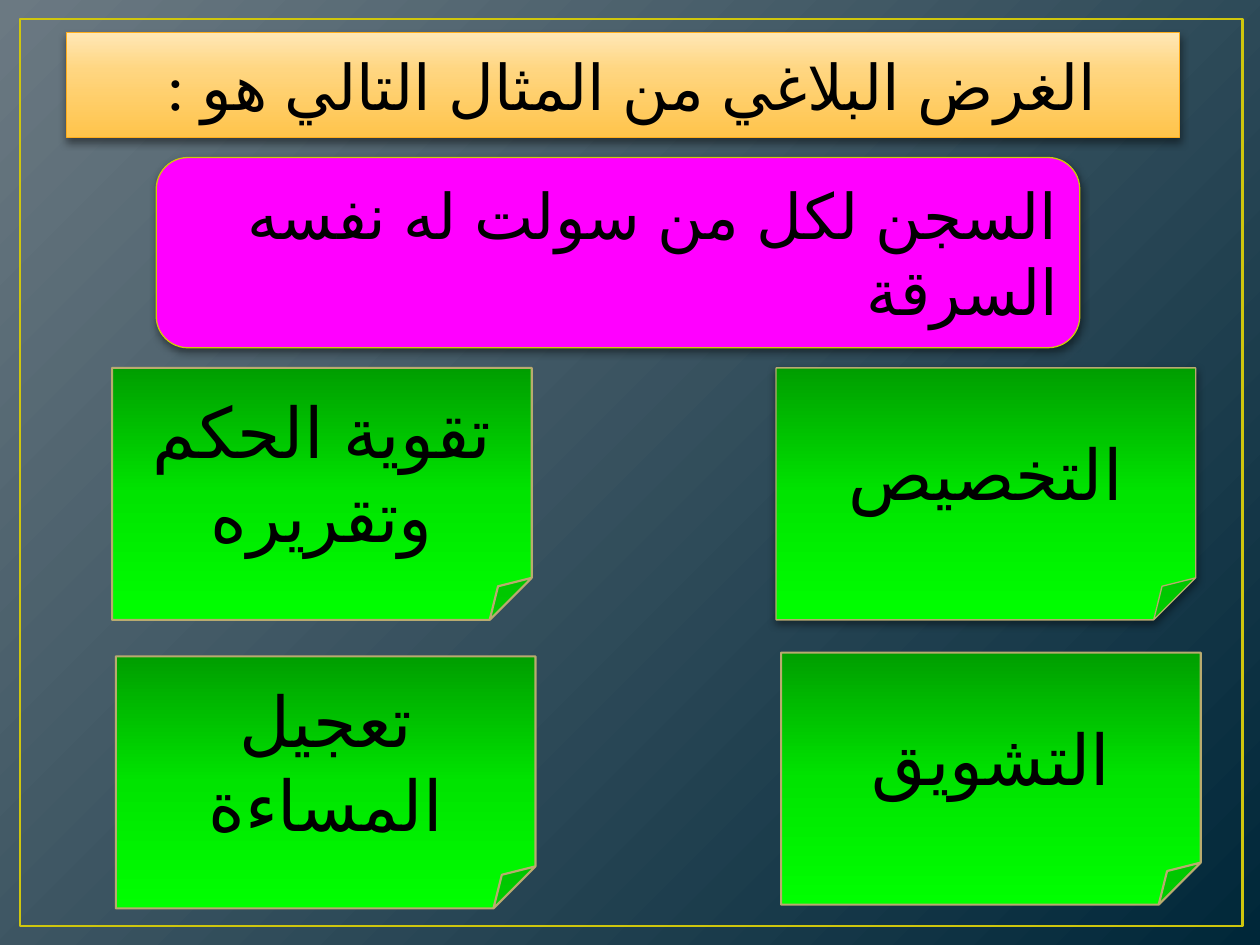
from lxml import etree
from pptx import Presentation
from pptx.dml.color import RGBColor
from pptx.enum.lang import MSO_LANGUAGE_ID
from pptx.enum.shapes import MSO_SHAPE
from pptx.enum.text import MSO_ANCHOR, MSO_AUTO_SIZE, PP_ALIGN
from pptx.oxml import parse_xml
from pptx.oxml.ns import nsdecls, qn
from pptx.util import Inches, Pt

CENTER, RIGHT = PP_ALIGN.CENTER, PP_ALIGN.RIGHT
ARABIC = MSO_LANGUAGE_ID.ARABIC
COLS, ROWS = 100, 75
CELL = Inches(0.1)
FONT = "TeX Gyre Schola"
TITLE_ONLY = 5
C = {
    "slate": "6B7982", "navy": "002739", "gold": "CFC60D", "black": "000000",
    "amber": "FFC44B", "honey": "FFD681", "cream": "FFE7B6", "orange": "FFAD1C",
    "magenta": "FF00FF", "forest": "009E00", "green": "00E400", "lime": "00FF00",
    "khaki": "B9AB6F",
}
BACKDROP = [(0, "slate"), (100, "navy")]
BANNER = [(0, "amber"), (65, "honey"), (100, "cream")]
CARD = [(0, "forest"), (50, "green"), (100, "lime")]
RADIAL = '<a:path path="circle"><a:fillToRect r="100000" b="100000"/></a:path>'


def rgb(name):
    return RGBColor.from_string(C[name])


def grid(col, row, cols, rows):
    return [round(n * CELL) for n in (col, row, cols, rows)]


def linear(angle):
    return f'<a:lin ang="{angle * 60000}" scaled="0"/>'


def set_gradient(fill, parent, stops, direction):
    fill.gradient()
    gs = "".join(
        f'<a:gs pos="{pos * 1000}"><a:srgbClr val="{C[name]}"/></a:gs>'
        for pos, name in stops)
    new = parse_xml(f'<a:gradFill {nsdecls("a")} rotWithShape="1">'
                    f'<a:gsLst>{gs}</a:gsLst>{direction}</a:gradFill>')
    old = parent.find(qn("a:gradFill"))
    parent.replace(old, new)


def set_line(sp, color, width):
    sp.line.color.rgb = rgb(color)
    sp.line.width = Pt(width)


def set_shadow(sp, visible):
    sp.shadow.inherit = False
    if visible:
        effects = sp._element.spPr.find(qn("a:effectLst"))
        effects.append(parse_xml(
            f'<a:outerShdw {nsdecls("a")} blurRad="{Pt(5)}" dist="{Pt(2)}" '
            f'dir="5400000" rotWithShape="0"><a:srgbClr val="{C["black"]}">'
            '<a:alpha val="43000"/></a:srgbClr></a:outerShdw>'))


def write(sp, lines, size, align=CENTER):
    tf = sp.text_frame
    layout = {
        "word_wrap": True, "auto_size": MSO_AUTO_SIZE.NONE,
        "vertical_anchor": MSO_ANCHOR.MIDDLE,
        "margin_left": CELL, "margin_right": CELL,
        "margin_top": CELL // 2, "margin_bottom": CELL // 2,
    }
    for name, value in layout.items():
        setattr(tf, name, value)
    font = {"size": Pt(size), "name": FONT, "language_id": ARABIC}
    for i, line in enumerate(lines):
        p = tf.add_paragraph() if i else tf.paragraphs[0]
        p.alignment = align
        p._p.get_or_add_pPr().set("rtl", "1")
        r = p.add_run()
        r.text = line
        for name, value in font.items():
            setattr(r.font, name, value)
        r.font.color.rgb = rgb("black")
        etree.SubElement(r._r.rPr, qn("a:cs")).set("typeface", FONT)


def add_frame(s):
    sp = s.shapes.add_shape(MSO_SHAPE.RECTANGLE, *grid(1.6, 1.5, 97, 72))
    sp.fill.background()
    set_line(sp, "gold", 1.5)
    set_shadow(sp, False)


def format_title(s, text):
    sp = s.shapes.title
    sp.left, sp.top, sp.width, sp.height = grid(5.3, 2.6, 88.3, 8.3)
    spPr = sp._element.spPr
    spPr.insert(1, parse_xml(
        f'<a:prstGeom {nsdecls("a")} prst="round2SameRect"><a:avLst>'
        '<a:gd name="adj1" fmla="val 16667"/><a:gd name="adj2" fmla="val 0"/>'
        '</a:avLst></a:prstGeom>'))
    set_gradient(sp.fill, spPr, BANNER, linear(270))
    set_line(sp, "orange", 0.75)
    set_shadow(sp, True)
    write(sp, [text], 36)


def add_example(s, text):
    sp = s.shapes.add_shape(MSO_SHAPE.ROUNDED_RECTANGLE,
                            *grid(12.4, 12.5, 73.3, 15.1))
    sp.fill.solid()
    sp.fill.fore_color.rgb = rgb("magenta")
    set_line(sp, "gold", 0.75)
    set_shadow(sp, True)
    write(sp, [text], 36, RIGHT)


def add_card(s, col, row, lines, raised=False):
    sp = s.shapes.add_shape(MSO_SHAPE.FOLDED_CORNER, *grid(col, row, 33.3, 20))
    set_gradient(sp.fill, sp._element.spPr, CARD, linear(90))
    set_line(sp, "khaki", 0.75 if raised else 1.25)
    set_shadow(sp, raised)
    write(sp, lines, 40)


def main():
    prs = Presentation()
    prs.slide_width, prs.slide_height = COLS * CELL, ROWS * CELL
    s = prs.slides.add_slide(prs.slide_layouts[TITLE_ONLY])
    bg = s.background.fill
    bg.solid()
    set_gradient(bg, s._element.cSld.bg.bgPr, BACKDROP, RADIAL)

    add_frame(s)
    format_title(s, "الغرض البلاغي من المثال التالي هو : ")
    add_example(s, "السجن لكل من سولت له نفسه السرقة")
    add_card(s, 61.6, 29.2, ["التخصيص"], raised=True)
    add_card(s, 8.9, 29.2, ["تقوية الحكم", "وتقريره"])
    add_card(s, 62, 51.8, ["التشويق"])
    add_card(s, 9.2, 52.1, ["تعجيل المساءة"])
    prs.save("out.pptx")


if __name__ == "__main__":
    main()
